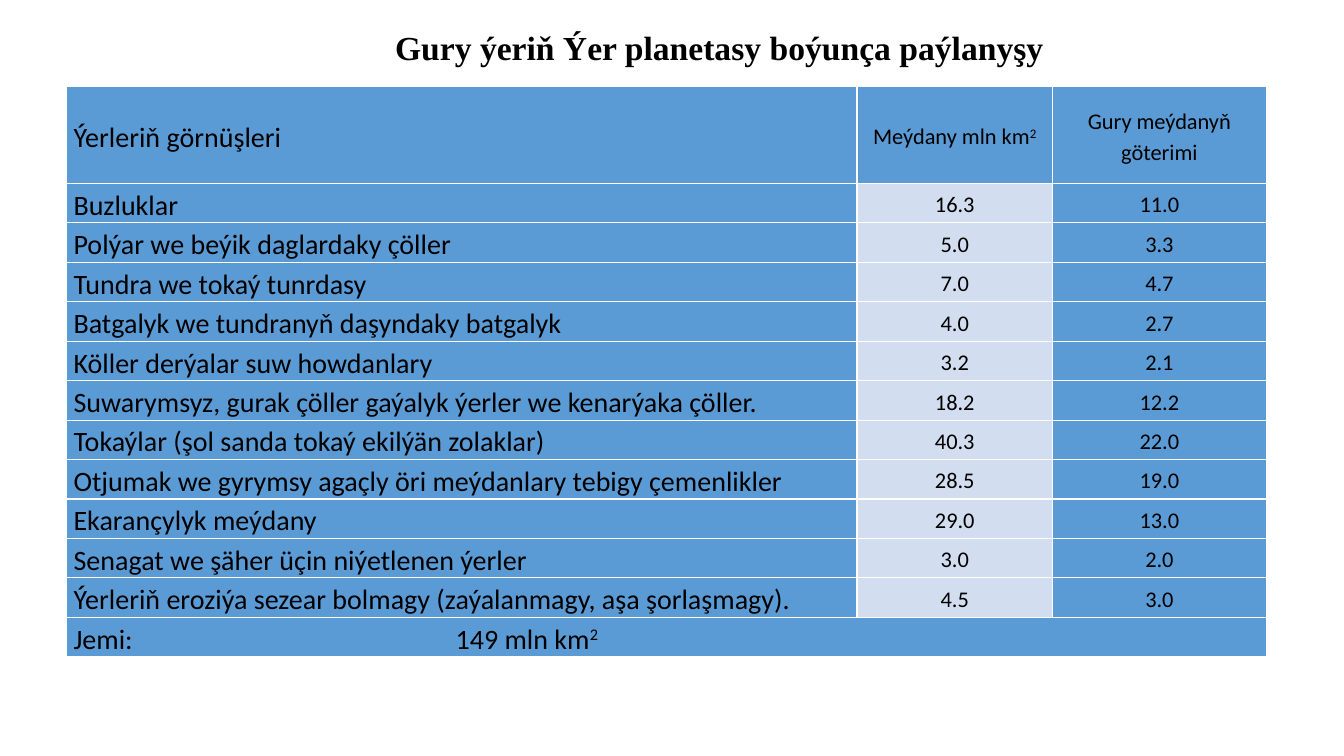
import pptx
import pptx.util
import pptx.dml.color
import pptx.enum.text
import pptx.oxml
import pptx.oxml.ns
from pptx.util import Inches

THEME = {
    "blue": "5B9BD5",
    "pale": "D2DEEF",
    "line": "FFFFFF",
    "text": "000000",
    "title_font": "Times New Roman",
    "table_font": "Calibri",
    "title_size": 24,
    "label_size": 20,
    "value_size": 16,
}
ANCHOR = pptx.enum.text.MSO_ANCHOR
ALIGN = pptx.enum.text.PP_ALIGN
NAMESPACE = pptx.oxml.ns.nsdecls("a")

LAND_TYPES = [
    ("Buzluklar", "16.3", "11.0"),
    ("Polýar we beýik daglardaky çöller", "5.0", "3.3"),
    ("Tundra we tokaý tunrdasy", "7.0", "4.7"),
    ("Batgalyk we tundranyň daşyndaky batgalyk", "4.0", "2.7"),
    ("Köller derýalar suw howdanlary", "3.2", "2.1"),
    ("Suwarymsyz, gurak çöller gaýalyk ýerler we kenarýaka çöller.", "18.2", "12.2"),
    ("Tokaýlar (şol sanda tokaý ekilýän zolaklar)", "40.3", "22.0"),
    ("Otjumak we gyrymsy agaçly öri meýdanlary tebigy çemenlikler", "28.5", "19.0"),
    ("Ekarançylyk meýdany", "29.0", "13.0"),
    ("Senagat we şäher üçin niýetlenen ýerler", "3.0", "2.0"),
    ("Ýerleriň eroziýa sezear bolmagy (zaýalanmagy, aşa şorlaşmagy).", "4.5", "3.0"),
]
HEADER = ("Ýerleriň görnüşleri", "Meýdany mln km²", "Gury meýdanyň göterimi")
TOTAL = ("Jemi:\t149 mln km²", "", "")
ROWS = [HEADER, *LAND_TYPES, TOTAL]
COLUMN_WIDTHS = (7.84, 1.94, 2.12)
HEADER_HEIGHT = 0.96
ROW_HEIGHT = 0.39
TOTAL_TAB = 3.79


def add_run(paragraph, text, font_name, size, bold=False):
    run = paragraph.add_run()
    run.text = text
    run.font.name = font_name
    run.font.size = pptx.util.Pt(size)
    run.font.bold = bold
    run.font.color.rgb = pptx.dml.color.RGBColor.from_string(THEME["text"])
    return run


def style_cell(cell, fill):
    cell.margin_left = cell.margin_right = Inches(0.07)
    cell.margin_top = cell.margin_bottom = 0
    properties = cell._tc.get_or_add_tcPr()
    for side in ("lnL", "lnR", "lnT", "lnB"):
        properties.append(pptx.oxml.parse_xml(
            f'<a:{side} {NAMESPACE} w="12700"><a:solidFill>'
            f'<a:srgbClr val="{THEME["line"]}"/></a:solidFill></a:{side}>'))
    cell.fill.solid()
    cell.fill.fore_color.rgb = pptx.dml.color.RGBColor.from_string(fill)


presentation = pptx.Presentation()
presentation.slide_width = Inches(13.33)
presentation.slide_height = Inches(7.5)
slide = presentation.slides.add_slide(presentation.slide_layouts[6])

table = slide.shapes.add_table(
    len(ROWS), len(COLUMN_WIDTHS), Inches(0.66), Inches(0.86), Inches(sum(COLUMN_WIDTHS)),
    Inches(HEADER_HEIGHT + ROW_HEIGHT * (len(ROWS) - 1))).table
table.first_row = False
table.horz_banding = False
for column, width in zip(table.columns, COLUMN_WIDTHS):
    column.width = Inches(width)

last_row = len(ROWS) - 1
for row_index, texts in enumerate(ROWS):
    table.rows[row_index].height = Inches(ROW_HEIGHT if row_index else HEADER_HEIGHT)
    for column_index, text in enumerate(texts):
        cell = table.cell(row_index, column_index)
        is_label = column_index == 0
        is_pale = column_index == 1 and 0 < row_index < last_row
        style_cell(cell, THEME["pale" if is_pale else "blue"])
        cell.vertical_anchor = ANCHOR.TOP if is_label and row_index else ANCHOR.MIDDLE
        paragraph = cell.text_frame.paragraphs[0]
        paragraph.alignment = ALIGN.LEFT if is_label else ALIGN.CENTER
        paragraph.line_spacing = 1.15
        if "\t" in text:
            paragraph._p.get_or_add_pPr().append(pptx.oxml.parse_xml(
                f'<a:tabLst {NAMESPACE}><a:tab pos="{Inches(TOTAL_TAB)}" algn="l"/></a:tabLst>'))
        size = THEME["label_size" if is_label else "value_size"]
        if text:
            add_run(paragraph, text.removesuffix("²"), THEME["table_font"], size)
        if text.endswith("²"):
            exponent = add_run(paragraph, "2", THEME["table_font"], size)
            exponent._r.get_or_add_rPr().set("baseline", "30000")
table.cell(last_row, 0).merge(table.cell(last_row, len(COLUMN_WIDTHS) - 1))

title = slide.shapes.add_textbox(Inches(3.82), Inches(0.22), Inches(6.69), Inches(0.81))
title.text_frame.word_wrap = False
title.text_frame.vertical_anchor = ANCHOR.TOP
add_run(title.text_frame.paragraphs[0], "Gury ýeriň Ýer planetasy boýunça paýlanyşy",
        THEME["title_font"], THEME["title_size"], bold=True)

presentation.save("out.pptx")
